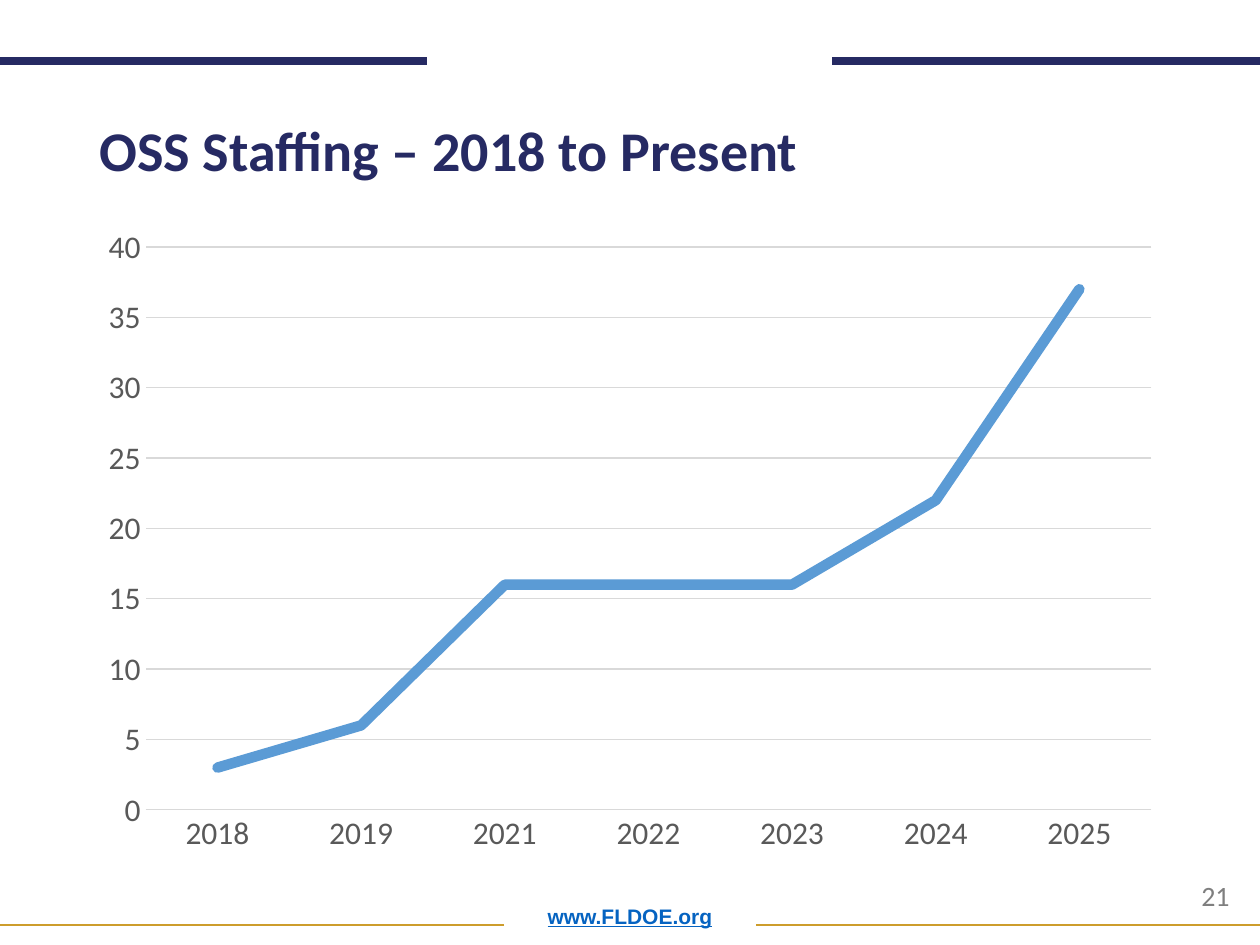
"""Build the OSS staffing slide with its line chart."""
from lxml import etree
from pptx import Presentation
from pptx.chart.data import CategoryChartData
from pptx.dml.color import RGBColor
from pptx.enum.chart import XL_CHART_TYPE, XL_MARKER_STYLE, XL_TICK_MARK
from pptx.enum.shapes import MSO_CONNECTOR
from pptx.enum.text import MSO_ANCHOR, MSO_AUTO_SIZE, PP_ALIGN
from pptx.oxml.ns import qn
from pptx.util import Pt

LINE = XL_CHART_TYPE.LINE
PLAIN = XL_MARKER_STYLE.NONE
NO_TICK = XL_TICK_MARK.NONE
STRAIGHT = MSO_CONNECTOR.STRAIGHT
BOTTOM, TOP = MSO_ANCHOR.BOTTOM, MSO_ANCHOR.TOP
FIXED = MSO_AUTO_SIZE.NONE
LEFT, CENTER = PP_ALIGN.LEFT, PP_ALIGN.CENTER

NAVY = RGBColor(0x26, 0x2A, 0x63)
GOLD = RGBColor(0xCD, 0x9D, 0x2C)
LINK = RGBColor(0x05, 0x63, 0xC1)
GRAY = RGBColor(0x7F, 0x7F, 0x7F)
DARK = RGBColor(0x59, 0x59, 0x59)
PALE = RGBColor(0xD9, 0xD9, 0xD9)
BLUE = RGBColor(0x5B, 0x9B, 0xD5)


def px(*sizes):
    return [round(size * 914400 / 126) for size in sizes]


def write(shape, text, font, size, color, bold, align, anchor):
    frame = shape.text_frame
    frame.word_wrap = True
    frame.auto_size = FIXED
    frame.vertical_anchor = anchor
    para = frame.paragraphs[0]
    para.alignment = align
    para.line_spacing = 0.9 if anchor == BOTTOM else 1
    run = para.add_run()
    run.text = text
    run.font.name = font
    run.font.size = Pt(size)
    run.font.bold = bold
    run.font.color.rgb = color
    return run


deck = Presentation()
deck.slide_width, deck.slide_height = px(1260, 945)
slide = deck.slides.add_slide(deck.slide_layouts[5])
shapes = slide.shapes

foot = shapes.add_textbox(*px(87, 882, 1086, 53))
link = write(foot, "www.FLDOE.org", "Arial", 12, LINK, True, CENTER, BOTTOM)
link.font.underline = True

for start, end, y, color, width in (
    (504, 0, 925, GOLD, 1),
    (427, 0, 61, NAVY, 5),
    (1260, 832, 61, NAVY, 5),
    (1260, 756, 925, GOLD, 1),
):
    rule = shapes.add_connector(STRAIGHT, *px(start, y, end, y))
    rule.line.color.rgb = color
    rule.line.width = Pt(width)
    etree.SubElement(rule._element.spPr, qn("a:effectLst"))

page = shapes.add_textbox(*px(1189, 872, 66, 47))
write(page, "21", "Calibri", 16, GRAY, False, LEFT, TOP)

title = shapes.title
title.left, title.top, title.width, title.height = px(87, 108, 1086, 82)
write(title, "OSS Staffing – 2018 to Present", "Calibri", 32, NAVY, True, LEFT, BOTTOM)

data = CategoryChartData()
data.categories = ["2018", "2019", "2021", "2022", "2023", "2024", "2025"]
data.add_series("Series 1", (3, 6, 16, 16, 16, 22, 37))
chart = shapes.add_chart(LINE, *px(87, 215, 1086, 651), data).chart
chart.has_legend = False
chart.has_title = False
chart.font.name = "Calibri"
chart.font.size = Pt(10)

years, count = chart.category_axis, chart.value_axis
for axis in (years, count):
    axis.major_tick_mark = axis.minor_tick_mark = NO_TICK
    font = axis.tick_labels.font
    font.name = "Calibri"
    font.size = Pt(18)
    font.color.rgb = DARK
count.minimum_scale, count.maximum_scale, count.major_unit = 0, 40, 5
count.format.line.fill.background()
for line in (years.format.line, count.major_gridlines.format.line):
    line.color.rgb = PALE
    line.width = Pt(0.75)

plot = chart.plots[0]
plot.vary_by_categories = False
staff = plot.series[0]
staff.smooth = False
staff.marker.style = PLAIN
staff.format.line.color.rgb = BLUE
staff.format.line.width = Pt(6)
stroke = staff.format.line._ln
stroke.set("cap", "rnd")
etree.SubElement(stroke, qn("a:round"))

deck.save("out.pptx")
